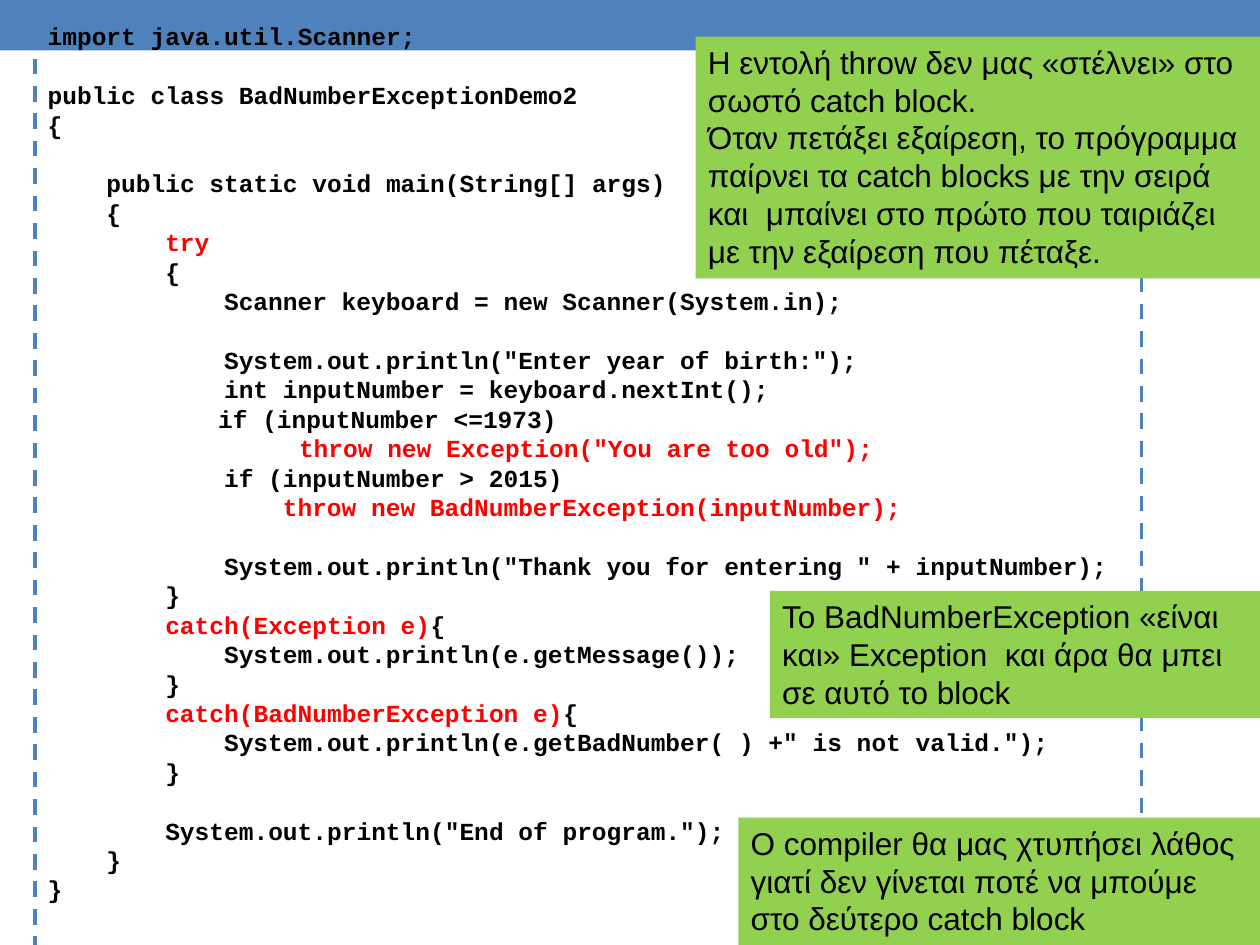
from pptx import Presentation
from pptx.dml.color import RGBColor
from pptx.enum.dml import MSO_LINE
from pptx.enum.shapes import MSO_SHAPE
from pptx.enum.text import MSO_ANCHOR, PP_ALIGN
from pptx.util import Inches, Pt

RECT = MSO_SHAPE.RECTANGLE
DASH = MSO_LINE.DASH
TOP = MSO_ANCHOR.TOP
LEFT = PP_ALIGN.LEFT
BLUE = RGBColor(0x4F, 0x81, 0xBD)
GREEN = RGBColor(0x92, 0xD0, 0x50)
RED = RGBColor(0xFF, 0x00, 0x00)
BLACK = RGBColor(0x00, 0x00, 0x00)

CODE_SIZE = 14
NOTE_SIZE = 18
LEADING = 1.2
CHAR_WIDTH = 0.6 * CODE_SIZE

prs = Presentation()
prs.slide_width = Inches(10)
prs.slide_height = Inches(7.5)
slide = prs.slides.add_slide(prs.slide_layouts[6])


def add_rect(x, y, w, h, fill=None):
    W, H = prs.slide_width / 100, prs.slide_height / 100
    sp = slide.shapes.add_shape(RECT, int(x * W), int(y * H), int(w * W), int(h * H))
    sp.shadow.inherit = False
    sp.line.fill.background()
    if fill is None:
        sp.fill.background()
    else:
        sp.fill.solid()
        sp.fill.fore_color.rgb = fill
    sp.text_frame.vertical_anchor = TOP
    return sp


def add_run(p, text, font, size, color, bold=False):
    p.alignment = LEFT
    p.line_spacing = Pt(LEADING * size)
    r = p.add_run()
    r.text = text
    r.font.name = font
    r.font.size = Pt(size)
    r.font.color.rgb = color
    r.font.bold = bold


add_rect(0, 0, 100, 5.33, BLUE)

code = [
    (0, 0, "", "import java.util.Scanner;"),
    (1, 0, "", "public class BadNumberExceptionDemo2"),
    (0, 0, "", "{"),
    (1, 4, "", "public static void main(String[] args)"),
    (0, 4, "", "{"),
    (0, 8, "try", ""),
    (0, 8, "", "{"),
    (0, 12, "", "Scanner keyboard = new Scanner(System.in);"),
    (1, 12, "", 'System.out.println("Enter year of birth:");'),
    (0, 12, "", "int inputNumber = keyboard.nextInt();"),
    (0, 11.6, "", "if (inputNumber <=1973)"),
    (0, 17.1, 'throw new Exception("You are too old");', ""),
    (0, 12, "", "if (inputNumber > 2015)"),
    (0, 16, "throw new BadNumberException(inputNumber);", ""),
    (1, 12, "", 'System.out.println("Thank you for entering " + inputNumber);'),
    (0, 8, "", "}"),
    (0, 8, "catch(Exception e)", "{"),
    (0, 12, "", "System.out.println(e.getMessage());"),
    (0, 8, "", "}"),
    (0, 8, "catch(BadNumberException e)", "{"),
    (0, 12, "", 'System.out.println(e.getBadNumber( ) +" is not valid.");'),
    (0, 8, "", "}"),
    (1, 8, "", 'System.out.println("End of program.");'),
    (0, 4, "", "}"),
    (0, 0, "", "}"),
]
sp = add_rect(2.8, 1.6, 87.8, 98.67)
sp.line.color.rgb = BLUE
sp.line.width = Pt(2.25)
sp.line.dash_style = DASH
tf = sp.text_frame
tf.word_wrap = False
for i, (gap, indent, red, black) in enumerate(code):
    p = tf.add_paragraph() if i else tf.paragraphs[0]
    p.space_before = Pt(gap * LEADING * CODE_SIZE)
    p._p.get_or_add_pPr().set("marL", str(int(Pt(indent * CHAR_WIDTH))))
    for text, color in ((red, RED), (black, BLACK)):
        if text:
            add_run(p, text, "Courier New", CODE_SIZE, color, True)

notes = [
    (58.6, 86.53, 41.4, 13.47, [
        "O compiler θα μας χτυπήσει λάθος γιατί δεν γίνεται ποτέ να μπούμε "
        "στο δεύτερο catch block"]),
    (61.1, 62.53, 38.9, 13.47, [
        "To BadNumberException «είναι και» Exception  και άρα θα μπει "
        "σε αυτό το block"]),
    (55.2, 3.87, 44.8, 25.6, [
        "Η εντολή throw δεν μας «στέλνει» στο σωστό catch block.",
        "Όταν πετάξει εξαίρεση, το πρόγραμμα παίρνει τα catch blocks με την σειρά "
        "και  μπαίνει στο πρώτο που ταιριάζει με την εξαίρεση που πέταξε."]),
]
for x, y, w, h, paragraphs in notes:
    tf = add_rect(x, y, w, h, GREEN).text_frame
    tf.word_wrap = True
    for i, text in enumerate(paragraphs):
        p = tf.add_paragraph() if i else tf.paragraphs[0]
        add_run(p, text, "Arial", NOTE_SIZE, BLACK)

prs.save("out.pptx")
